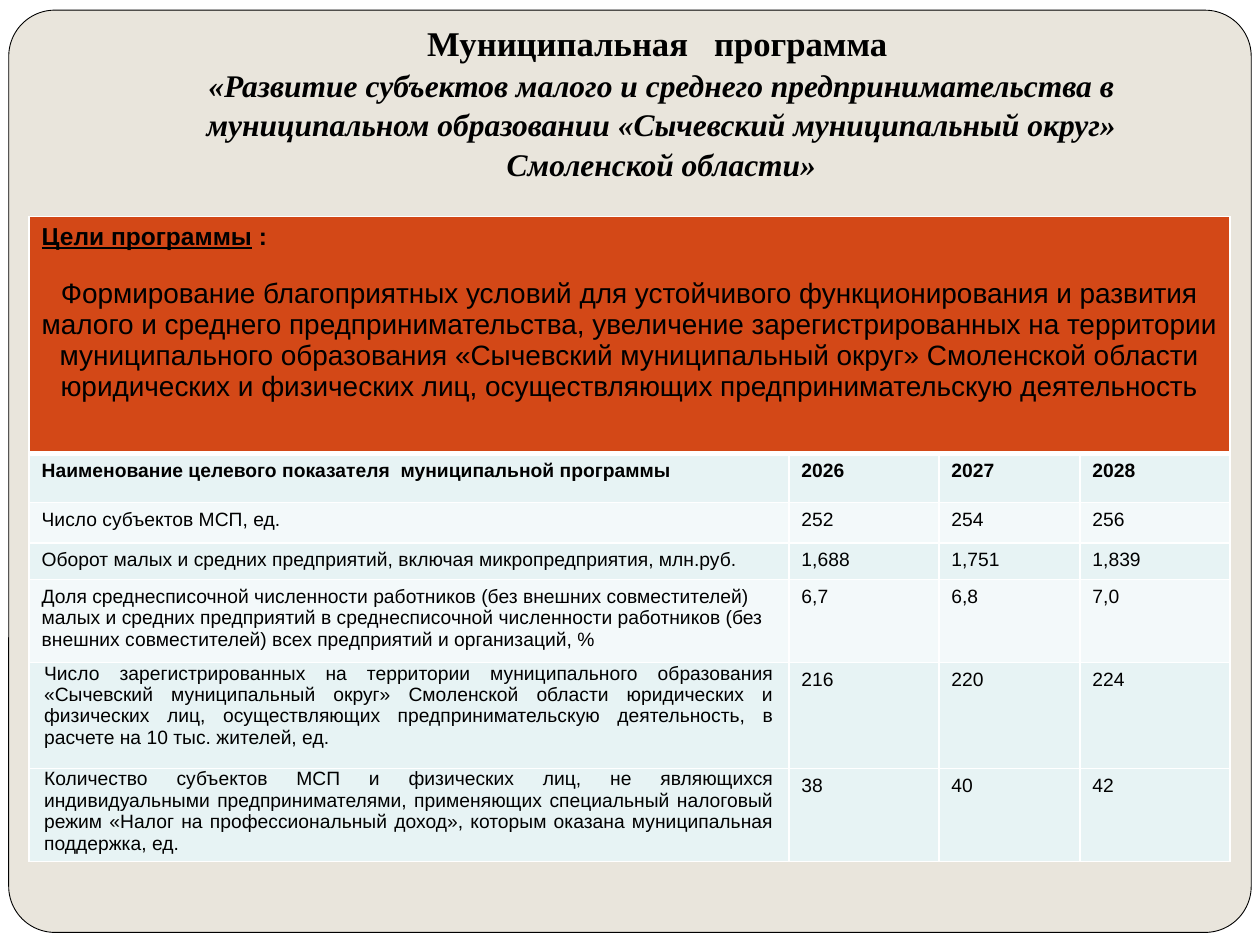
from lxml import etree
from pptx import Presentation
from pptx.dml.color import RGBColor
from pptx.enum.shapes import MSO_SHAPE
from pptx.enum.text import MSO_ANCHOR, PP_ALIGN
from pptx.oxml.ns import qn
from pptx.util import Pt

RECT, ROUND = MSO_SHAPE.RECTANGLE, MSO_SHAPE.ROUNDED_RECTANGLE
LEFT, MID, JUST = PP_ALIGN.LEFT, PP_ALIGN.CENTER, PP_ALIGN.JUSTIFY
BOTTOM = MSO_ANCHOR.BOTTOM

HUES = {
    "sand": "E9E5DC",
    "white": "FFFFFF",
    "black": "000000",
    "rust": "D34817",
    "mist": "E7F3F4",
    "pale": "F3F9FA",
}
HEAD = {"name": "Times New Roman", "size": Pt(19.8), "bold": True}
SUB = {**HEAD, "size": Pt(18), "italic": True}
BODY = {"name": "Arial", "size": Pt(11), "bold": False}
BOLD = {**BODY, "bold": True}
GOAL = {**BODY, "size": Pt(16)}
LABEL = {**BOLD, "size": Pt(14)}

TITLE = [
    ("Муниципальная   программа ", HEAD),
    (
        "«Развитие субъектов малого и среднего предпринимательства в муниципальном "
        "образовании «Сычевский муниципальный округ» Смоленской области»",
        SUB,
    ),
]
AIM = (
    "Формирование благоприятных условий для устойчивого функционирования и развития "
    "малого и среднего предпринимательства, увеличение зарегистрированных на территории "
    "муниципального образования «Сычевский муниципальный округ» Смоленской области "
    "юридических и физических лиц, осуществляющих предпринимательскую деятельность"
)
ROWS = [
    ("Наименование целевого показателя  муниципальной программы", "2026", "2027", "2028"),
    ("Число субъектов МСП, ед.", "252", "254", "256"),
    (
        "Оборот малых и средних предприятий, включая микропредприятия, млн.руб.",
        "1,688", "1,751", "1,839",
    ),
    (
        "Доля среднесписочной численности работников (без внешних совместителей) малых и "
        "средних предприятий в среднесписочной численности работников (без внешних "
        "совместителей) всех предприятий и организаций, %",
        "6,7", "6,8", "7,0",
    ),
    (
        "Число зарегистрированных на территории муниципального образования «Сычевский "
        "муниципальный округ» Смоленской области юридических и физических лиц, "
        "осуществляющих предпринимательскую деятельность, в расчете на 10 тыс. жителей, ед.",
        "216", "220", "224",
    ),
    (
        "Количество субъектов МСП и физических лиц, не являющихся индивидуальными "
        "предпринимателями, применяющих специальный налоговый режим «Налог на "
        "профессиональный доход», которым оказана муниципальная поддержка, ед.",
        "38", "40", "42",
    ),
]
FILLS = ["mist", "pale", "mist", "pale", "mist", "mist"]
WIDTHS = [434.2, 85.7, 80.6, 85.7]
HEIGHTS = [135.4, 28.1, 23, 20.9, 47.5, 60.5, 53.3]


def hue(key):
    """Return the named colour."""
    return RGBColor.from_string(HUES[key])


def put(item, values):
    """Set each attribute of an item from a dict."""
    for key, value in values.items():
        setattr(item, key, value)


def write(para, text, style):
    """Add a styled black run to a paragraph."""
    run = para.add_run()
    run.text = text
    put(run.font, style)
    run.font.color.rgb = hue("black")
    return run


def panel(slide, kind, box, fill):
    """Draw a plain filled shape without a line."""
    shape = slide.shapes.add_shape(kind, *map(Pt, box))
    shape.shadow.inherit = False
    shape.fill.solid()
    shape.fill.fore_color.rgb = hue(fill)
    shape.line.fill.background()
    return shape


def frame(slide, box):
    """Draw the white page and the rounded sheet inside it."""
    left, top, width, height = box
    slide.background.fill.solid()
    slide.background.fill.fore_color.rgb = hue("sand")
    panel(slide, RECT, box, "white")
    inner = (left + 5, top + 5.8, width - 10, height - 13)
    sheet = panel(slide, ROUND, inner, "sand")
    sheet.adjustments[0] = 0.05
    sheet.line.color.rgb = hue("black")
    sheet.line.width = Pt(0.5)


def title(slide, box):
    """Write the two-part heading at the foot of its box."""
    text = slide.shapes.add_textbox(*map(Pt, box)).text_frame
    put(text, {"word_wrap": True, "vertical_anchor": BOTTOM, "margin_bottom": Pt(7.2)})
    para = text.paragraphs[0]
    put(para, {"alignment": MID, "line_spacing": 1.05})
    (first, head), (second, sub) = TITLE
    write(para, first, head)
    para.add_line_break()
    write(para, second, sub)


def paint(cell, fill, below=1, above=1):
    """Give a cell white borders and a solid fill."""
    props = cell._tc.get_or_add_tcPr()
    for side, width in (("L", 1), ("R", 1), ("T", above), ("B", below)):
        line = etree.SubElement(props, qn(f"a:ln{side}"), w=str(Pt(width)))
        solid = etree.SubElement(line, qn("a:solidFill"))
        etree.SubElement(solid, qn("a:srgbClr"), val=HUES["white"])
    cell.fill.solid()
    cell.fill.fore_color.rgb = hue(fill)


def goal(table):
    """Fill the merged top row with the programme goals."""
    cells = table.rows[0].cells
    for cell in cells:
        paint(cell, "rust", below=3)
    top = table.cell(0, 0)
    top.merge(table.cell(0, len(WIDTHS) - 1))
    para = top.text_frame.paragraphs[0]
    write(para, "Цели программы", LABEL).font.underline = True
    write(para, " :", LABEL)
    para = top.text_frame.add_paragraph()
    put(para, {"alignment": MID, "space_before": Pt(16)})
    write(para, AIM, GOAL)


def grid(slide, box):
    """Build the table of goals and yearly targets."""
    size = len(HEIGHTS), len(WIDTHS)
    table = slide.shapes.add_table(*size, *map(Pt, box)).table
    put(table, {"first_row": False, "horz_banding": False})
    for col, width in zip(table.columns, WIDTHS):
        col.width = Pt(width)
    for row, height in zip(table.rows, HEIGHTS):
        row.height = Pt(height)
    goal(table)
    inset = {"margin_left": Pt(8.6), "margin_right": Pt(8.6), "margin_top": 0, "margin_bottom": 0}
    for r, (texts, fill) in enumerate(zip(ROWS, FILLS), 1):
        for c, text in enumerate(texts):
            cell = table.cell(r, c)
            paint(cell, fill, above=3 if r == 1 else 1)
            just = c == 0 and r > 4
            if just:
                put(cell, inset)
            para = cell.text_frame.paragraphs[0]
            para.alignment = JUST if just else LEFT
            write(para, text, BOLD if r == 1 else BODY)


def main():
    """Build and save the slide."""
    deck = Presentation()
    put(deck, {"slide_width": Pt(720), "slide_height": Pt(540)})
    slide = deck.slides.add_slide(deck.slide_layouts[6])
    frame(slide, (0, 0, 720, 540))
    title(slide, (72, 21.6, 612, 90))
    grid(slide, (16.6, 123.8, sum(WIDTHS), sum(HEIGHTS)))
    deck.save("out.pptx")


if __name__ == "__main__":
    main()
